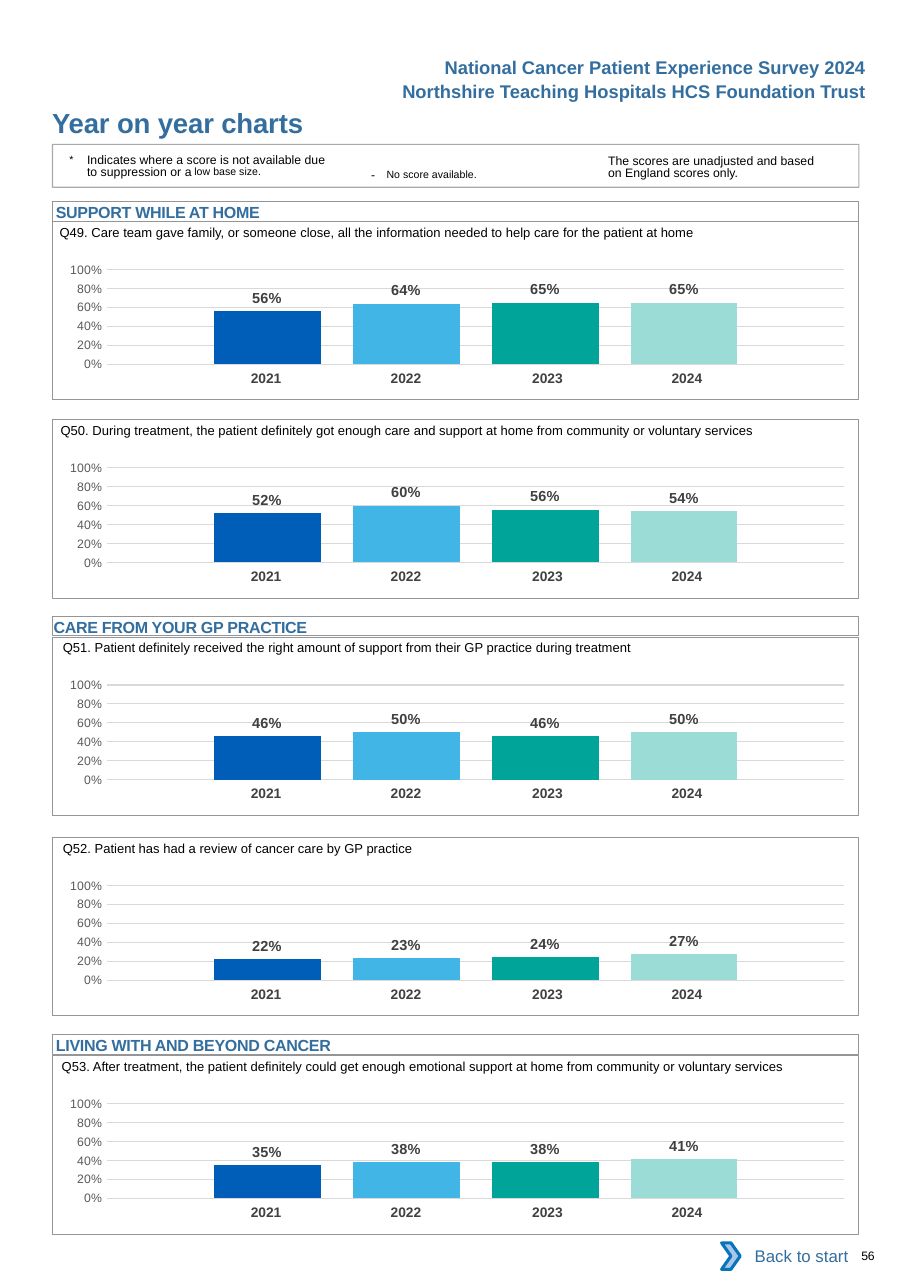
from pptx import Presentation
from pptx.chart.data import CategoryChartData as ChartData
from pptx.dml.color import RGBColor
from pptx.enum.chart import XL_CHART_TYPE as Kind, XL_LABEL_POSITION as Spot, XL_TICK_MARK as Tick
from pptx.enum.shapes import MSO_SHAPE as Form
from pptx.enum.text import MSO_ANCHOR as Anchor, PP_ALIGN as Align
from pptx.oxml import parse_xml
from pptx.oxml.ns import nsdecls, qn
from pptx.util import Pt
from lxml.etree import SubElement

BLUE = RGBColor(0x33, 0x6E, 0x9F)
BLACK = RGBColor(0, 0, 0)
WHITE = RGBColor(0xFF, 0xFF, 0xFF)
EDGE = RGBColor(0x93, 0x95, 0x98)
GRID = RGBColor(0xD9, 0xD9, 0xD9)
SCALE = RGBColor(0x59, 0x59, 0x59)
LABEL = RGBColor(0x40, 0x40, 0x40)
YEAR = RGBColor(0x41, 0x40, 0x42)
SKY = RGBColor(0xA8, 0xC7, 0xE9)
ARROW = RGBColor(0x0A, 0x74, 0xBB)
BARS = [RGBColor(0x00, 0x5E, 0xB8), RGBColor(0x41, 0xB6, 0xE6),
        RGBColor(0x00, 0xA4, 0x99), RGBColor(0x9C, 0xDC, 0xD7)]
PLAIN = "{2D5ABB26-0587-4C30-8999-92F81FD0307C}"  # table style without grid
LEFT, WIDE = 34.3, 527


def write(par, text, size, color=BLACK, bold=False, track=0, lift=0):
    run = par.add_run()
    run.text = text
    font = run.font
    font.name, font.size, font.bold = "Arial", Pt(size), bold
    font.color.rgb = color
    props = run._r.get_or_add_rPr()
    if track:
        props.set("spc", str(round(track * 100)))
    if lift:
        props.set("baseline", str(lift * 1000))


def place(x, y, w, h, form=None, ins=(0, 0, 0, 0)):
    area = [Pt(n) for n in (x, y, w, h)]
    if form is None:
        shape = shapes.add_textbox(*area)
    else:
        shape = shapes.add_shape(form, *area)
        shape.shadow.inherit = False
        shape.fill.background()
        shape.line.color.rgb = EDGE
        shape.line.width = Pt(0.5)
    frame = shape.text_frame
    frame.word_wrap = True
    frame.vertical_anchor = Anchor.TOP
    frame.margin_left, frame.margin_top, frame.margin_right, frame.margin_bottom = map(Pt, ins)
    par = frame.paragraphs[0]
    par.alignment = Align.LEFT
    return shape, par


deck = Presentation()
deck.slide_width, deck.slide_height = Pt(594.72), Pt(841.68)
slide = deck.slides.add_slide(deck.slide_layouts[5])
shapes = slide.shapes

# Title and page header
title = shapes.title
title.left, title.top, title.width, title.height = Pt(34), Pt(69.5), Pt(324), Pt(21.6)
frame = title.text_frame
frame.margin_left = frame.margin_top = frame.margin_right = frame.margin_bottom = 0
frame.vertical_anchor = Anchor.TOP
frame.paragraphs[0].alignment = Align.LEFT
write(frame.paragraphs[0], "Year on year charts", 18, BLUE, True, -0.1)

for y, text in [(33.1, "National Cancer Patient Experience Survey 2024"),
                (49, "Northshire Teaching Hospitals HCS Foundation Trust")]:
    _, par = place(216, y, 357.1, 21.6, ins=(7.2, 3.6, 7.2, 3.6))
    par.alignment = Align.RIGHT
    write(par, text, 12, BLUE, True)

# Notes
box, _ = place(LEFT, 94.3, WIDE, 28.1, Form.RECTANGLE)
box.line.width = Pt(0.75)
tint = box._element.spPr.find(qn("a:ln")).find(".//" + qn("a:srgbClr"))
SubElement(tint, qn("a:alpha")).set("val", "80000")

_, par = place(45.4, 99.4, 173, 20, ins=(0, 2.2, 0, 0))
par.line_spacing = Pt(8.1)
props = par._p.get_or_add_pPr()
props.set("marL", str(Pt(11.5)))
props.set("indent", str(-Pt(11.5)))
write(par, "*\t", 12, lift=3)
write(par, "Indicates where a score is not available due to suppression or ", 8)
write(par, "a ", 8, track=-0.5)
write(par, "low base size.", 12, lift=7)

_, par = place(235.4, 101.5, 132, 17.3, ins=(7.2, 3.6, 7.2, 3.6))
write(par, "- ", 8, track=2.6)
write(par, "No score available.", 12, lift=3)

_, par = place(397.4, 99.4, 144.7, 19.4, ins=(0, 2.2, 0, 0))
par.line_spacing = Pt(8.1)
write(par, "The scores are unadjusted and based on England scores only.", 8)

# Footer
back, par = place(476.6, 805.7, 85, 30.2, Form.RECTANGLE, (7.2, 3.6, 7.2, 3.6))
back.fill.solid()
back.fill.fore_color.rgb = WHITE
back.line.fill.background()
back.text_frame.vertical_anchor = Anchor.MIDDLE
par.alignment = Align.RIGHT
write(par, "Back to start", 11, BLUE)

mark, _ = place(471.6, 812.2, 12.2, 17.3, Form.CHEVRON)
mark.fill.solid()
mark.fill.fore_color.rgb = SKY
mark.line.color.rgb = ARROW
mark.line.width = Pt(2)

_, par = place(563, 815.8, 29, 10)
write(par, "56", 8, track=-0.2)

# Section headings: top, indent, text
for y, inset, text in [(131.8, 2.2, "SUPPORT WHILE AT HOME"),
                       (402.5, 0.7, "CARE FROM YOUR GP PRACTICE"),
                       (676.1, 2.2, "LIVING WITH AND BEYOND CANCER")]:
    _, par = place(LEFT, y, WIDE, 13, Form.RECTANGLE, (inset, 0.7, 0, 0))
    write(par, text, 10.5, BLUE, True, -0.17)

# Question panels: top, text left, scores, question
panels = [
    (144.7, 38.2, (0.56, 0.64, 0.65, 0.65),
     "Q49. Care team gave family, or someone close, all the information needed "
     "to help care for the patient at home"),
    (274.3, 38.9, (0.52, 0.60, 0.56, 0.54),
     "Q50. During treatment, the patient definitely got enough care and support "
     "at home from community or voluntary services"),
    (416.2, 40.3, (0.46, 0.50, 0.46, 0.50),
     "Q51. Patient definitely received the right amount of support from their "
     "GP practice during treatment"),
    (547.2, 40.3, (0.22, 0.23, 0.24, 0.27),
     "Q52. Patient has had a review of cancer care by GP practice"),
    (689.8, 39.6, (0.35, 0.38, 0.38, 0.41),
     "Q53. After treatment, the patient definitely could get enough emotional "
     "support at home from community or voluntary services"),
]
for top, x, scores, ask in panels:
    place(LEFT, top, WIDE, 116.6, Form.RECTANGLE)
    _, par = place(x, top - 4.5, 519, 17.3, ins=(0.7, 6.5, 0, 0))
    write(par, ask, 8.5)

    # Column chart
    data = ChartData(number_format="0%")
    data.categories = ["1"]
    for n, score in enumerate(scores, 1):
        data.add_series(f"Series {n}", [score])
    chart = shapes.add_chart(Kind.COLUMN_CLUSTERED, Pt(28.1), Pt(top + 18),
                             Pt(WIDE), Pt(92.9), data).chart
    chart.has_legend = chart.has_title = False
    chart.font.name, chart.font.size = "Calibri", Pt(10)
    chart.category_axis.visible = False
    axis = chart.value_axis
    axis.minimum_scale, axis.maximum_scale, axis.major_unit = 0, 1, 0.2
    axis.major_tick_mark = axis.minor_tick_mark = Tick.NONE
    axis.format.line.fill.background()
    axis.major_gridlines.format.line.color.rgb = GRID
    axis.major_gridlines.format.line.width = Pt(0.75)
    ticks = axis.tick_labels
    ticks.number_format, ticks.number_format_is_linked = "0%", False
    ticks.font.name, ticks.font.size = "Arial", Pt(8)
    ticks.font.color.rgb = SCALE
    plot = chart.plots[0]
    plot.gap_width, plot.overlap, plot.vary_by_categories = 200, -30, False
    for bar, color in zip(plot.series, BARS):
        bar.format.fill.solid()
        bar.format.fill.fore_color.rgb = color
        tags = bar.data_labels
        tags.show_value, tags.position = True, Spot.OUTSIDE_END
        tags.number_format, tags.number_format_is_linked = "0%", False
        tags.font.name, tags.font.size, tags.font.bold = "Arial", Pt(9.5), True
        tags.font.color.rgb = LABEL
    area = chart._chartSpace.chart.plotArea
    for old in area.findall(qn("c:layout")):
        area.remove(old)
    area.insert(0, parse_xml(
        f'<c:layout {nsdecls("c")}><c:manualLayout><c:layoutTarget val="inner"/>'
        '<c:xMode val="edge"/><c:yMode val="edge"/><c:x val="0.079"/><c:y val="0.145"/>'
        '<c:w val="0.915"/><c:h val="0.666"/></c:manualLayout></c:layout>'))

    # Years under the columns
    table = shapes.add_table(1, 4, Pt(124.6), Pt(top + 94), Pt(370.8), Pt(19.4)).table
    table.first_row = table.horz_banding = False
    table._tbl.tblPr.find(qn("a:tableStyleId")).text = PLAIN
    table.rows[0].height = Pt(19.4)
    for n, (wide, right) in enumerate([(91.4, 0), (91.4, 0), (96.5, 2.9), (91.4, 8.6)]):
        table.columns[n].width = Pt(wide)
        cell = table.cell(0, n)
        cell.fill.background()
        cell.margin_left, cell.margin_right = Pt(7.2), Pt(right)
        par = cell.text_frame.paragraphs[0]
        par.alignment = Align.CENTER
        write(par, str(2021 + n), 9, YEAR, True)

deck.save("out.pptx")
